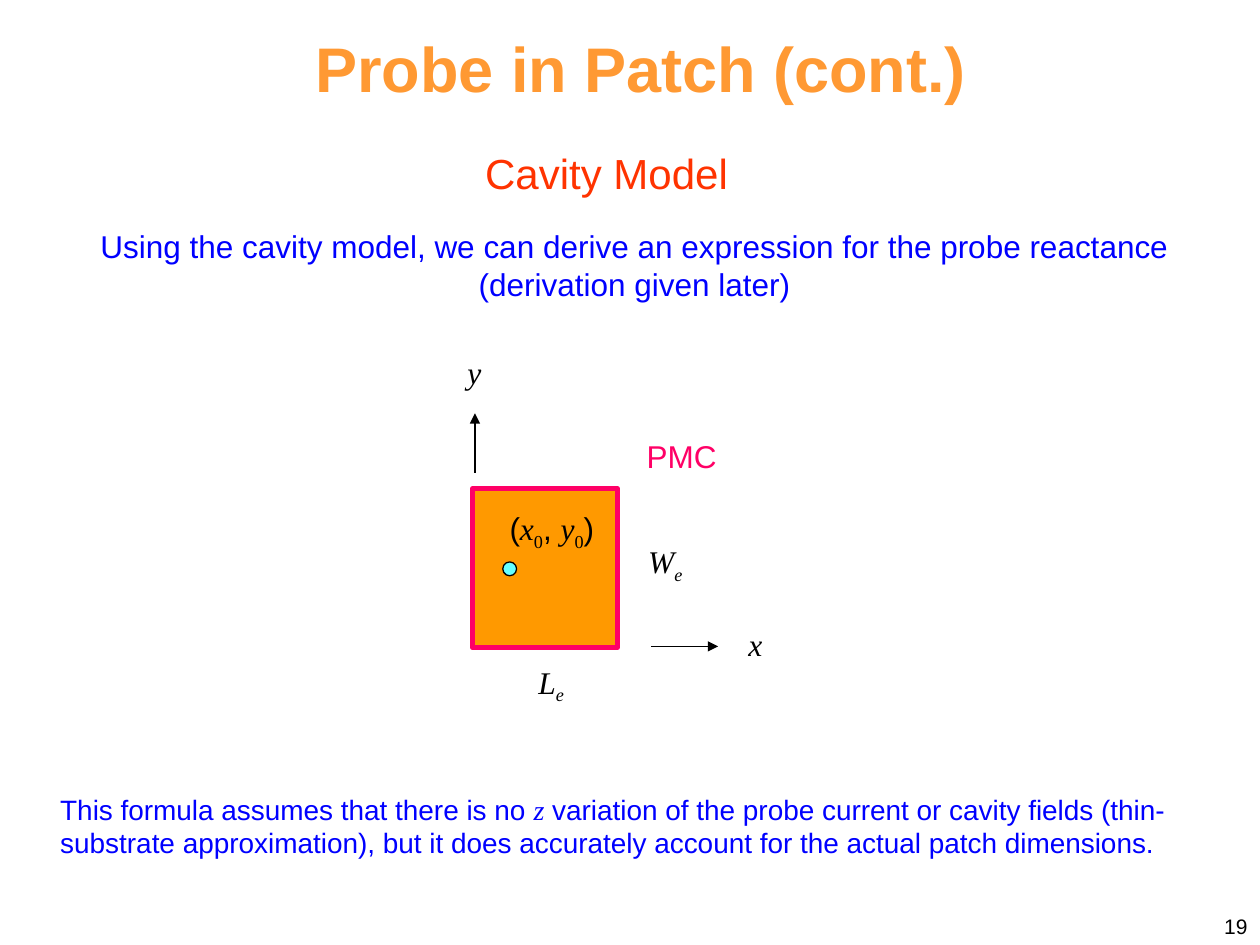
from lxml import etree
from pptx import Presentation
from pptx.dml.color import RGBColor
from pptx.enum import shapes, text
from pptx.oxml.ns import qn
from pptx.util import Inches, Pt

ORANGE = RGBColor(0xFF, 0x99, 0x33)
RED = RGBColor(0xFF, 0x33, 0x00)
BLUE = RGBColor(0x00, 0x00, 0xFF)
PINK = RGBColor(0xFF, 0x00, 0x66)
PATCH = RGBColor(0xFF, 0x99, 0x00)
CYAN = RGBColor(0x66, 0xFF, 0xFF)
BLACK = RGBColor(0x00, 0x00, 0x00)

LEFT, CENTER, RIGHT = text.PP_ALIGN.LEFT, text.PP_ALIGN.CENTER, text.PP_ALIGN.RIGHT
TOP, MIDDLE, BOTTOM = text.MSO_ANCHOR.TOP, text.MSO_ANCHOR.MIDDLE, text.MSO_ANCHOR.BOTTOM

# Run styles: font, italic, subscript
SANS = ("Arial", False, False)
VAR = ("Times New Roman", True, False)
VAR_SUB = ("Times New Roman", True, True)
NUM_SUB = ("Times New Roman", False, True)

# Page text: box, paragraphs of (text, style) runs, size, colour, bold, align, anchor, wrap
PAGE_TEXT = [
    ((1.18, 0.27, 7.81, 0.52), [[("Probe in Patch (cont.)", SANS)]],
     36, ORANGE, True, CENTER, MIDDLE, True),
    ((3.74, 1.12, 2.24, 0.51), [[("Cavity Model ", SANS)]],
     24, RED, False, CENTER, TOP, False),
    ((0.63, 1.75, 8.81, 0.71),
     [[("Using the cavity model, we can derive an expression for the probe reactance", SANS)],
      [("(derivation given later)", SANS)]],
     18, BLUE, False, CENTER, TOP, True),
    ((0.38, 6.24, 9.16, 0.64),
     [[("This formula assumes that there is no ", SANS), ("z", VAR),
       (" variation of the probe current or cavity fields (thin-substrate approximation), "
        "but it does accurately account for the actual patch dimensions.", SANS)]],
     16, BLUE, False, LEFT, TOP, True),
    ((7.67, 6.98, 2.33, 0.52), [[("19", SANS)]],
     12, BLACK, False, RIGHT, BOTTOM, True),
]

# Diagram labels: left, top, width, colour, runs
LABEL_HEIGHT, LABEL_SIZE = 0.4, 18
LABELS = [
    (4.17, 5.21, 0.41, BLACK, [("L", VAR), ("e", VAR_SUB)]),
    (5.04, 4.25, 0.48, BLACK, [("W", VAR), ("e", VAR_SUB)]),
    (5.84, 4.91, 0.31, BLACK, [("x", VAR)]),
    (3.61, 2.75, 0.31, BLACK, [("y", VAR)]),
    (5.03, 3.42, 0.76, PINK, [("PMC", SANS)]),
    (3.93, 3.99, 0.9, BLACK,
     [("(", SANS), ("x", VAR), ("0", NUM_SUB), (", ", SANS),
      ("y", VAR), ("0", NUM_SUB), (")", SANS)]),
]

# Diagram shapes: preset, box, fill, line colour, line width
SHAPES = [
    (shapes.MSO_SHAPE.RECTANGLE, (3.75, 3.88, 1.15, 1.26), PATCH, PINK, 3),
    (shapes.MSO_SHAPE.OVAL, (3.99, 4.46, 0.11, 0.11), CYAN, BLACK, 0.75),
]

# Axis arrows: x1, y1, x2, y2
AXES = [(5.17, 5.13, 5.7, 5.13), (3.77, 3.75, 3.77, 3.28)]


def inches(values):
    return [Inches(v) for v in values]


def add_text(slide, box, paragraphs, size, color, bold=False,
             align=CENTER, anchor=TOP, wrap=False):
    tf = slide.shapes.add_textbox(*inches(box)).text_frame
    tf.word_wrap = wrap
    tf.vertical_anchor = anchor
    for i, runs in enumerate(paragraphs):
        p = tf.add_paragraph() if i else tf.paragraphs[0]
        p.alignment = align
        for words, (font, italic, subscript) in runs:
            r = p.add_run()
            r.text = words
            r.font.name, r.font.size = font, Pt(size)
            r.font.bold, r.font.italic = bold, italic
            r.font.color.rgb = color
            if subscript:
                r._r.get_or_add_rPr().set("baseline", "-25000")


def add_shape(slide, preset, box, fill, line, width):
    sp = slide.shapes.add_shape(preset, *inches(box))
    sp.shadow.inherit = False
    sp.fill.solid()
    sp.fill.fore_color.rgb = fill
    sp.line.color.rgb = line
    sp.line.width = Pt(width)


def add_arrow(slide, ends):
    c = slide.shapes.add_connector(shapes.MSO_CONNECTOR.STRAIGHT, *inches(ends))
    c.line.color.rgb = BLACK
    c.line.width = Pt(0.75)
    etree.SubElement(c.line._get_or_add_ln(), qn("a:tailEnd"), type="triangle")
    etree.SubElement(c._element.spPr, qn("a:effectLst"))


def main():
    prs = Presentation()
    prs.slide_width, prs.slide_height = Inches(10), Inches(7.5)
    s = prs.slides.add_slide(prs.slide_layouts[6])

    # Title, explanations and page number
    for item in PAGE_TEXT:
        add_text(s, *item)

    # Patch with probe, axes and labels
    for item in SHAPES:
        add_shape(s, *item)
    for ends in AXES:
        add_arrow(s, ends)
    for left, top, width, color, runs in LABELS:
        add_text(s, (left, top, width, LABEL_HEIGHT), [runs], LABEL_SIZE, color)

    prs.save("out.pptx")


if __name__ == "__main__":
    main()
